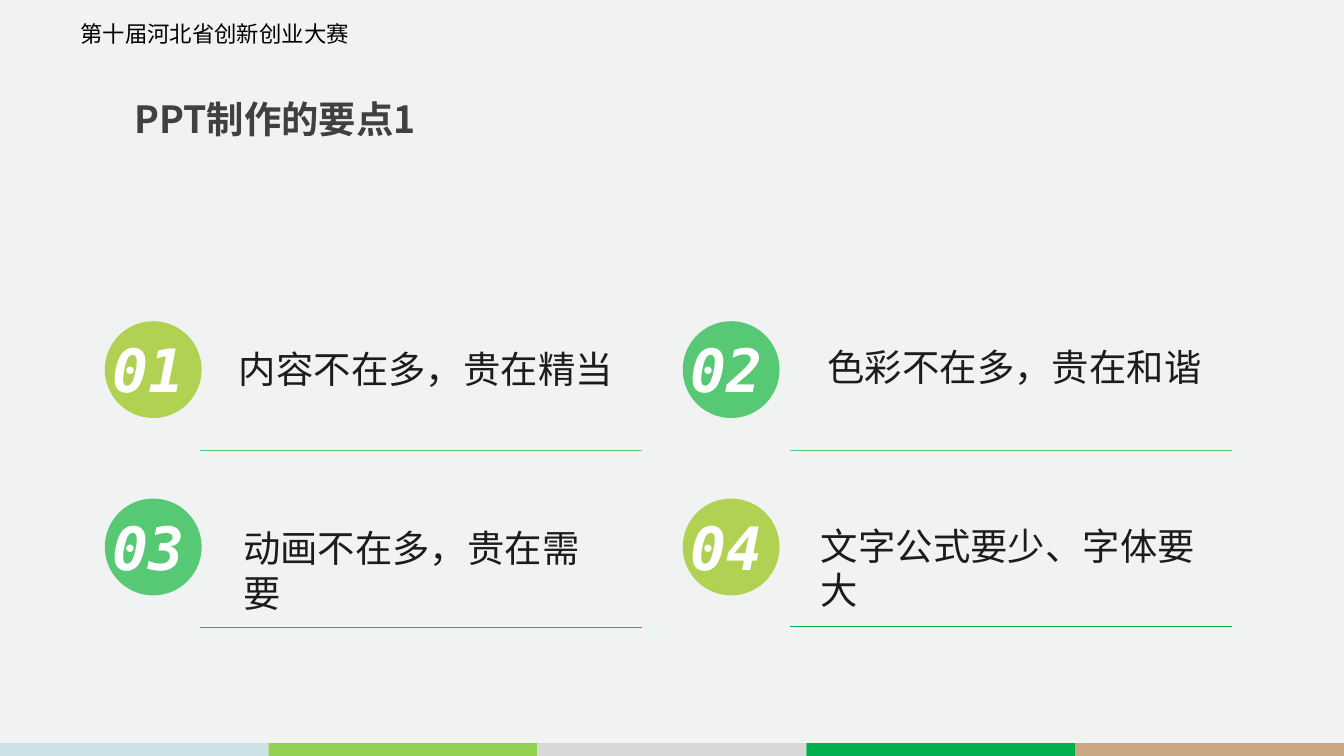
from lxml import etree
from pptx import Presentation
from pptx.dml.color import RGBColor
from pptx.enum import shapes, text
from pptx.oxml import ns
from pptx.util import Inches, Pt

PAPER = RGBColor(0xF1, 0xF3, 0xF2)
BLACK = RGBColor(0, 0, 0)
WHITE = RGBColor(0xFF, 0xFF, 0xFF)
GRAY = RGBColor(0x40, 0x40, 0x40)
INK = RGBColor(0x1C, 0x1C, 0x1C)
LIME = RGBColor(0xB1, 0xD1, 0x53)
MINT = RGBColor(0x57, 0xC8, 0x73)
TEAL = RGBColor(0x00, 0xB5, 0xAC)
GREEN = RGBColor(0x00, 0xB0, 0x50)
BANDS = [RGBColor(0xCD, 0xE2, 0xE7), RGBColor(0x92, 0xD0, 0x50),
         RGBColor(0xD8, 0xD8, 0xD8), GREEN, RGBColor(0xCA, 0xA8, 0x84)]

SANS = "Noto Sans CJK SC"
MONO = "DejaVu Sans Mono"
HEADER = "第十届河北省创新创业大赛"
TITLE = "PPT制作的要点1"
POINTS = [
    ("01", "内容不在多，贵在精当", LIME, MINT, (1.68, 2.53, 3.06), 3.35),
    ("02", "色彩不在多，贵在和谐", MINT, MINT, (6.06, 2.51, 3.06), 3.35),
    ("03", "动画不在多，贵在需要", MINT, TEAL, (1.71, 3.86, 2.95), 4.67),
    ("04", "文字公式要少、字体要大", LIME, GREEN, (6.01, 3.84, 3.2), 4.66),
]
DOT_X, DOT_Y = (0.78, 5.08), (2.39, 3.71)
RULE_X = (1.49, 5.88)
DOT, RULE = 0.72, 3.29

deck = Presentation()
deck.slide_width = Inches(10)
deck.slide_height = deck.slide_width * 9 // 16
slide = deck.slides.add_slide(deck.slide_layouts[6])
slide.background.fill.solid()
slide.background.fill.fore_color.rgb = PAPER


def add_block(kind, x, y, w, h, color):
    block = slide.shapes.add_shape(kind, Inches(x), Inches(y), Inches(w), Inches(h))
    block.shadow.inherit = False
    block.fill.solid()
    block.fill.fore_color.rgb = color
    block.line.fill.background()


def add_label(words, x, y, w, h, size, face, color, bold=False, slant=False):
    box = slide.shapes.add_textbox(Inches(x), Inches(y), Inches(w), Inches(h))
    frame = box.text_frame
    frame.word_wrap = True
    frame.auto_size = text.MSO_AUTO_SIZE.SHAPE_TO_FIT_TEXT
    para = frame.paragraphs[0]
    para.text = words
    font = para.font
    font.size, font.name = Pt(size), face
    font.bold, font.italic = bold, slant
    font.color.rgb = color
    if face == SANS:
        etree.SubElement(font._element, ns.qn("a:ea"), typeface=face)


def add_rule(x, y, color):
    rule = slide.shapes.add_connector(
        shapes.MSO_CONNECTOR.STRAIGHT, Inches(x), Inches(y), Inches(x + RULE), Inches(y))
    rule.line.color.rgb = color
    rule.line.width = Pt(0.75)
    etree.SubElement(rule._element.spPr, ns.qn("a:effectLst"))


for i, color in enumerate(BANDS):
    add_block(shapes.MSO_SHAPE.RECTANGLE, 2 * i, 5.53, 2, 0.1, color)

add_label(HEADER, 0.5, 0.1, 5.56, 0.3, 12, "Calibri", BLACK)
add_label(TITLE, 0.9, 0.67, 4.22, 0.44, 20, SANS, GRAY, bold=True)

for i, (num, words, fill, line, (x, y, w), base) in enumerate(POINTS):
    row, col = divmod(i, 2)
    left, top = DOT_X[col], DOT_Y[row]
    add_block(shapes.MSO_SHAPE.OVAL, left, top, DOT, DOT, fill)
    add_label(num, left - 0.04, top + 0.04, 0.82, 0.64, 32, MONO, WHITE, True, True)
    add_rule(RULE_X[col], base, line)
    add_label(words, x, y, w, 0.44, 20, SANS, INK)

deck.save("out.pptx")
